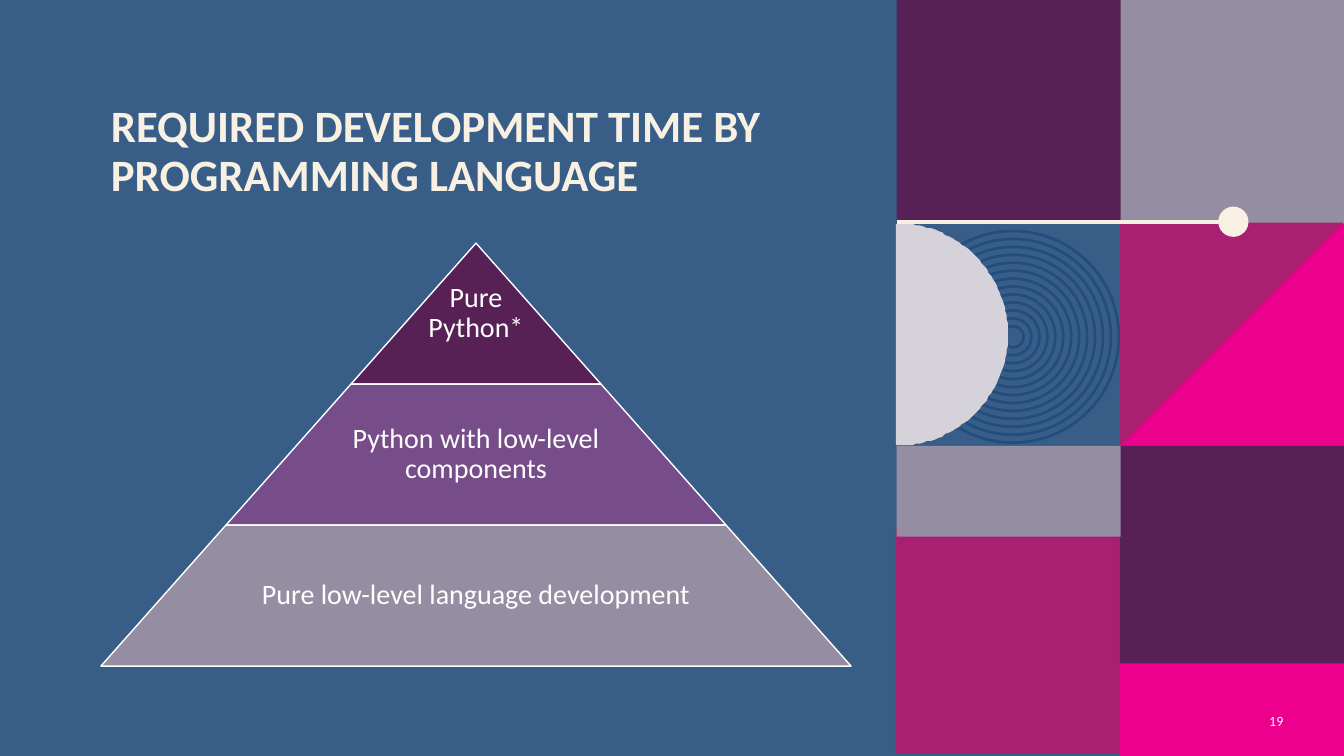
import math
from pptx import Presentation
from pptx.dml.color import RGBColor
from pptx.enum import shapes, text
from pptx.oxml.ns import qn
from pptx.util import Pt
from lxml import etree

TITLE = "REQUIRED DEVELOPMENT TIME BY PROGRAMMING LANGUAGE"
SLIDE_NUMBER = "19"
FONT = "Calibri"
COLORS = {
    "blue": "385E88", "ring": "224E7F", "pink": "EC008C", "magenta": "AA2070",
    "gray": "958EA2", "plum": "582156", "violet": "764D88", "pale": "D5D2DA",
    "cream": "F8F0E3", "white": "FFFFFF",
}
# label, fill, width of the label as a share of the tier
TIERS = [
    ("Pure\vPython*", "plum", 1),
    ("Python with low-level components", "violet", 0.65),
    ("Pure low-level language development", "gray", 0.65),
]
TILE = 160
LEFT, RIGHT = 640.5, 800
# fill, left, top, height
TILES = [
    ("pink", RIGHT, 158.7, TILE),
    ("gray", RIGHT, 0, TILE),
    ("plum", LEFT, -0.5, TILE),
    ("magenta", LEFT - 0.5, 378.5, TILE),
    ("plum", RIGHT, 318.5, TILE),
    ("pink", RIGHT, 473.8, 66.2),
    ("gray", LEFT, 318.5, 64.8),
]
RING_CENTER, RING_COUNT, RING_MAX, RING_STEP = (723.6, 240.6), 13, 151.2, 11.34
HALF_DISC_TOP, HALF_DISC_RADIUS = 159.5, 79.5
RULE_Y, RULE_END, DOT = 158.4, 881, 21.6
PYRAMID_MIDDLE, PYRAMID_TOP, TIER_WIDTH, TIER_HEIGHT = 340, 173.7, 178.6, 100.7


def rgb(name):
    return RGBColor.from_string(COLORS[name])


def style(shape, fill=None, line=None, weight=1):
    shape.shadow.inherit = False
    if fill:
        shape.fill.solid()
        shape.fill.fore_color.rgb = rgb(fill)
    else:
        shape.fill.background()
    if line:
        shape.line.color.rgb = rgb(line)
        shape.line.width = Pt(weight)
    else:
        shape.line.fill.background()
    return shape


def add(kind, left, top, width, height, **look):
    shape = slide.shapes.add_shape(kind, Pt(left), Pt(top), Pt(width), Pt(height))
    return style(shape, **look)


def add_circle(center_x, center_y, size, **look):
    return add(shapes.MSO_SHAPE.OVAL, center_x - size / 2, center_y - size / 2,
               size, size, **look)


def write(box, words, size, color="white", bold=False, align="CENTER",
          anchor="MIDDLE", spacing=0.9, inset=None):
    frame = box.text_frame
    frame.word_wrap = True
    frame.auto_size = text.MSO_AUTO_SIZE.NONE
    frame.vertical_anchor = getattr(text.MSO_ANCHOR, anchor)
    if inset is not None:
        frame.margin_left = frame.margin_right = Pt(inset)
        frame.margin_top = frame.margin_bottom = Pt(inset)
    frame.text = words
    paragraph = frame.paragraphs[0]
    paragraph.alignment = getattr(text.PP_ALIGN, align)
    paragraph.line_spacing = spacing
    for run in paragraph.runs:
        run.font.name, run.font.size, run.font.bold = FONT, Pt(size), bold
        run.font.color.rgb = rgb(color)


def add_text(left, top, width, height, words, size, **form):
    box = slide.shapes.add_textbox(Pt(left), Pt(top), Pt(width), Pt(height))
    write(box, words, size, **form)


def draw_mosaic():
    for fill, left, top, height in TILES:
        add(shapes.MSO_SHAPE.RECTANGLE, left, top, TILE, height, fill=fill)
    corner = add(shapes.MSO_SHAPE.RIGHT_TRIANGLE, RIGHT, 159.1, TILE, TILE, fill="magenta")
    corner.rotation = 90

    for ring in range(RING_COUNT):
        add_circle(*RING_CENTER, RING_MAX - ring * RING_STEP, line="ring", weight=2)

    radius = HALF_DISC_RADIUS
    arc = [(LEFT + radius * math.sin(math.radians(angle)),
            HALF_DISC_TOP + radius * (1 - math.cos(math.radians(angle))))
           for angle in range(0, 181, 2)]
    builder = slide.shapes.build_freeform(*arc[0], scale=Pt(1))
    builder.add_line_segments(arc[1:], close=True)
    style(builder.convert_to_shape(), fill="pale")

    rule = slide.shapes.add_connector(shapes.MSO_CONNECTOR.STRAIGHT, Pt(LEFT),
                                      Pt(RULE_Y), Pt(RULE_END), Pt(RULE_Y))
    rule.line.color.rgb = rgb("cream")
    rule.line.width = Pt(3)
    etree.SubElement(rule.element.spPr, qn("a:effectLst"))
    add_circle(RULE_END, RULE_Y, DOT, fill="cream")


def draw_pyramid():
    for tier, (label, fill, share) in enumerate(TIERS):
        width = TIER_WIDTH * (tier + 1)
        top = PYRAMID_TOP + tier * TIER_HEIGHT
        band = add(shapes.MSO_SHAPE.TRAPEZOID, PYRAMID_MIDDLE - width / 2, top,
                   width, TIER_HEIGHT, fill=fill, line="white")
        band.adjustments[0] = TIER_WIDTH / 2 / TIER_HEIGHT
        add_text(PYRAMID_MIDDLE - width * share / 2, top, width * share,
                 TIER_HEIGHT, label, 20, inset=2)


deck = Presentation()
deck.slide_width, deck.slide_height = Pt(960), Pt(540)
slide = deck.slides.add_slide(deck.slide_layouts[5])
slide.background.fill.solid()
slide.background.fill.fore_color.rgb = rgb("blue")

draw_mosaic()
title = slide.shapes.title
title.left, title.top, title.width, title.height = Pt(72), Pt(70.6), Pt(535.7), Pt(104.4)
write(title, TITLE, 32, color="cream", bold=True, align="LEFT", anchor="TOP")
draw_pyramid()
add_text(887.8, 500.4, 36, 28.8, SLIDE_NUMBER, 10, align="RIGHT", spacing=1)

deck.save("out.pptx")
